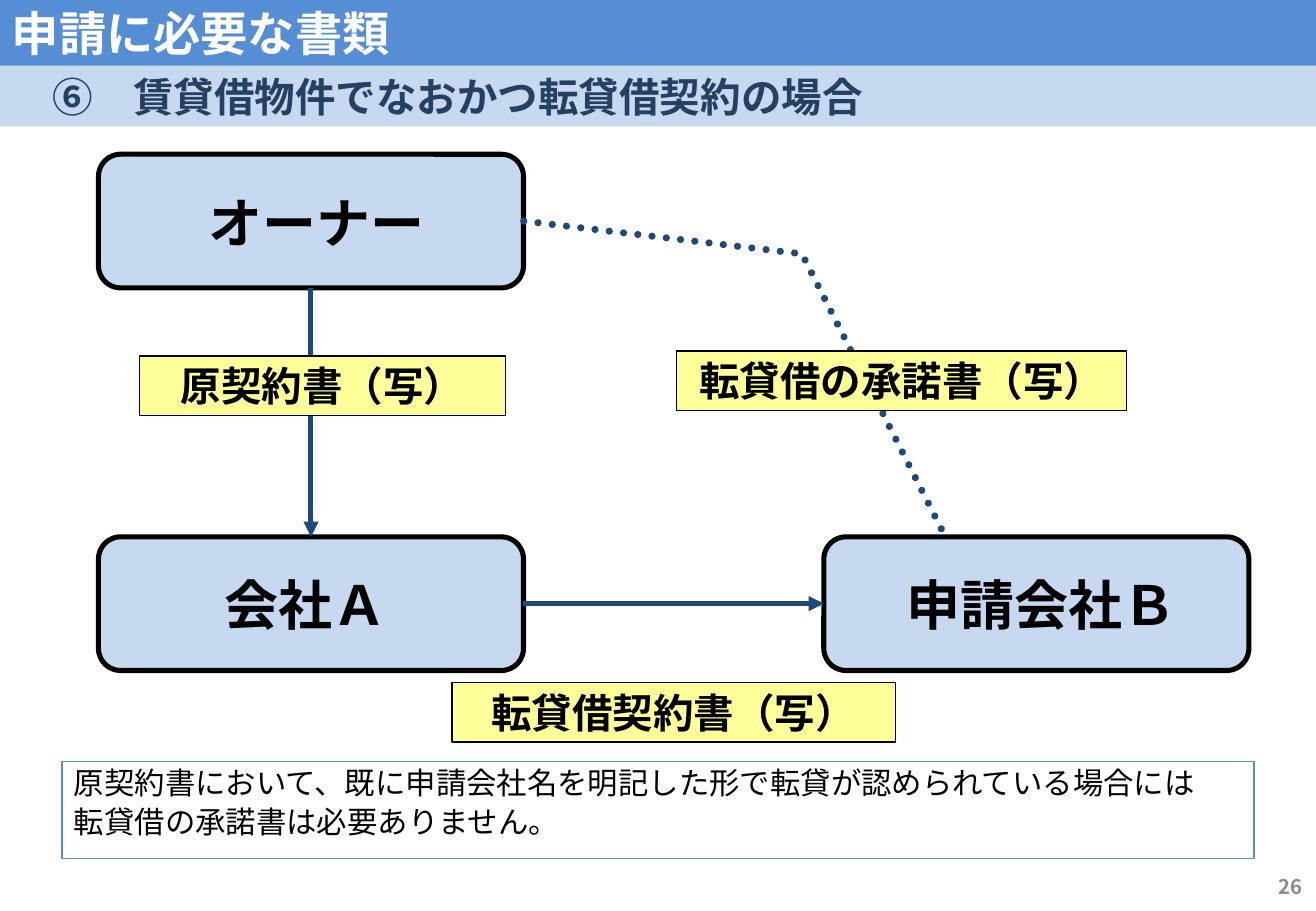
from dataclasses import dataclass

import lxml.etree
import pptx
import pptx.dml.color
import pptx.enum.dml
import pptx.enum.lang
import pptx.enum.shapes
import pptx.enum.text
import pptx.oxml.ns
import pptx.util

RGBColor = pptx.dml.color.RGBColor
Align = pptx.enum.text.PP_ALIGN
Anchor = pptx.enum.text.MSO_ANCHOR
Geometry = pptx.enum.shapes.MSO_SHAPE

WHITE = RGBColor(0xFF, 0xFF, 0xFF)
BLACK = RGBColor(0x00, 0x00, 0x00)
BLUE = RGBColor(0x55, 0x8E, 0xD5)
PALE_BLUE = RGBColor(0xC6, 0xD9, 0xF1)
NAVY = RGBColor(0x1F, 0x49, 0x7D)
DARK_NAVY = RGBColor(0x25, 0x40, 0x61)
YELLOW = RGBColor(0xFF, 0xFF, 0x99)
GRAY = RGBColor(0x8C, 0x8C, 0x8C)

BODY_FONT = "Arial"
HEADING_FONT = "Noto Sans CJK JP"
SLIDE_WIDTH = pptx.util.Inches(10.83)
SLIDE_HEIGHT = pptx.util.Inches(7.5)

# Sizes shared by repeated parts, in percent of the slide
PARTY_SIZE = (32.3, 14.67)
CAPTION_SIZE = (31.49, 8.4)
CAPTION_DROP = 3.2
LABEL_HEIGHT = 6.53


@dataclass(frozen=True)
class Area:
    """Place on the slide, in percent of its width and height."""
    left: float
    top: float
    width: float
    height: float

    def emu(self) -> tuple[int, int, int, int]:
        return (across(self.left), down(self.top),
                across(self.width), down(self.height))


@dataclass(frozen=True)
class Style:
    size: float
    color: RGBColor = BLACK
    font: str = BODY_FONT
    bold: bool = True
    align: Align = Align.CENTER
    anchor: Anchor = Anchor.TOP
    line_spacing: float = 1.0
    insets: tuple[float, float, float, float] = (0.1, 0.05, 0.1, 0.05)


@dataclass(frozen=True)
class Party:
    name: str
    left: float
    top: float
    caption_left: float


@dataclass(frozen=True)
class Document:
    name: str
    left: float
    top: float
    width: float


@dataclass(frozen=True)
class Band:
    text: str
    area: Area
    fill: RGBColor
    style: Style


CAPTION_STYLE = Style(32)
LABEL_STYLE = Style(24, line_spacing=0.8, insets=(0.1, 0.12, 0.1, 0.05))
NOTE_STYLE = Style(18, bold=False, align=Align.LEFT, line_spacing=0.8,
                   insets=(0.1, 0.08, 0.1, 0.08))
PAGE_STYLE = Style(12, GRAY, HEADING_FONT, align=Align.RIGHT, anchor=Anchor.MIDDLE)
TITLE_STYLE = Style(28, WHITE, HEADING_FONT, align=Align.LEFT, anchor=Anchor.MIDDLE)
SUBTITLE_STYLE = Style(24, DARK_NAVY, HEADING_FONT, align=Align.LEFT, anchor=Anchor.MIDDLE)

OWNER = Party("オーナー", 7.48, 16.93, 8.31)
APPLICANT = Party("申請会社Ｂ", 62.6, 58.93, 63.43)
LESSEE = Party("会社Ａ", 7.48, 58.93, 7.48)
PARTIES = (OWNER, APPLICANT, LESSEE)

DOCUMENTS = (
    Document("原契約書（写）", 10.62, 39.07, 27.79),
    Document("転貸借契約書（写）", 34.35, 74.93, 33.7),
    Document("転貸借の承諾書（写）", 51.43, 38.53, 34.16),
)
CONSENT_ROUTE = ((39.8, 24.27), (60.94, 27.87), (71.84, 58.93))
NOTE = ("原契約書において、既に申請会社名を明記した形で転貸が認められている場合には\n"
        "転貸借の承諾書は必要ありません。")
BANDS = (
    Band("申請に必要な書類", Area(0, -0.27, 100, 7.6), BLUE, TITLE_STYLE),
    Band("　⑥　賃貸借物件でなおかつ転貸借契約の場合", Area(0, 7.2, 100, 6.67),
         PALE_BLUE, SUBTITLE_STYLE),
)


def across(share: float) -> int:
    return round(SLIDE_WIDTH * share / 100)


def down(share: float) -> int:
    return round(SLIDE_HEIGHT * share / 100)


def write(shape, text: str, style: Style) -> None:
    frame = shape.text_frame
    frame.text = text
    frame.word_wrap = True
    frame.vertical_anchor = style.anchor
    (frame.margin_left, frame.margin_top,
     frame.margin_right, frame.margin_bottom) = map(pptx.util.Inches, style.insets)
    for index, paragraph in enumerate(frame.paragraphs):
        paragraph.alignment = style.align
        paragraph.line_spacing = style.line_spacing
        if index:
            paragraph.space_before = pptx.util.Pt(6)
        for run in paragraph.runs:
            run.font.size = pptx.util.Pt(style.size)
            run.font.name = style.font
            run.font.bold = style.bold
            run.font.color.rgb = style.color
            run.font.language_id = pptx.enum.lang.MSO_LANGUAGE_ID.JAPANESE


def add_box(slide, geometry: Geometry, area: Area, fill: RGBColor | None = None,
            line: RGBColor | None = None, line_width: float = 0.75):
    box = slide.shapes.add_shape(geometry, *area.emu())
    box.shadow.inherit = False
    if fill is None:
        box.fill.background()
    else:
        box.fill.solid()
        box.fill.fore_color.rgb = fill
    if line is None:
        box.line.fill.background()
    else:
        box.line.color.rgb = line
        box.line.width = pptx.util.Pt(line_width)
    return box


def add_text(slide, area: Area, text: str, style: Style) -> None:
    write(slide.shapes.add_textbox(*area.emu()), text, style)


def add_arrow(slide, source, source_side: int, target, target_side: int) -> None:
    arrow = slide.shapes.add_connector(pptx.enum.shapes.MSO_CONNECTOR.STRAIGHT, 0, 0, 0, 0)
    arrow.begin_connect(source, source_side)
    arrow.end_connect(target, target_side)
    arrow.line.color.rgb = NAVY
    arrow.line.width = pptx.util.Pt(3)
    properties = arrow.element.spPr
    outline = properties.find(pptx.oxml.ns.qn("a:ln"))
    lxml.etree.SubElement(outline, pptx.oxml.ns.qn("a:tailEnd"), type="triangle")
    lxml.etree.SubElement(properties, pptx.oxml.ns.qn("a:effectLst"))


def add_dotted_route(slide, shares: tuple[tuple[float, float], ...]) -> None:
    start, *rest = [(across(x), down(y)) for x, y in shares]
    builder = slide.shapes.build_freeform(*start)
    builder.add_line_segments(rest, close=False)
    route = builder.convert_to_shape()
    route.shadow.inherit = False
    route.fill.background()
    route.line.color.rgb = NAVY
    route.line.width = pptx.util.Pt(4.25)
    route.line.dash_style = pptx.enum.dml.MSO_LINE.ROUND_DOT
    route.element.spPr.find(pptx.oxml.ns.qn("a:ln")).set("cap", "rnd")


def main() -> None:
    deck = pptx.Presentation()
    deck.slide_width, deck.slide_height = SLIDE_WIDTH, SLIDE_HEIGHT
    slide = deck.slides.add_slide(deck.slide_layouts[6])

    # Parties and their names
    boxes = {party: add_box(slide, Geometry.ROUNDED_RECTANGLE,
                            Area(party.left, party.top, *PARTY_SIZE), PALE_BLUE, BLACK, 3)
             for party in PARTIES}
    for party in PARTIES:
        add_text(slide, Area(party.caption_left, party.top + CAPTION_DROP, *CAPTION_SIZE),
                 party.name, CAPTION_STYLE)

    # Relations between the parties
    add_dotted_route(slide, CONSENT_ROUTE)
    add_arrow(slide, boxes[LESSEE], 3, boxes[APPLICANT], 1)
    add_arrow(slide, boxes[OWNER], 2, boxes[LESSEE], 0)

    # Required documents
    for document in DOCUMENTS:
        area = Area(document.left, document.top, document.width, LABEL_HEIGHT)
        write(add_box(slide, Geometry.RECTANGLE, area, YELLOW, BLACK),
              document.name, LABEL_STYLE)

    # Note and page number
    note = add_box(slide, Geometry.RECTANGLE, Area(4.71, 83.6, 90.58, 10.67), line=BLUE)
    write(note, NOTE, NOTE_STYLE)
    add_text(slide, Area(76.55, 94.67, 23.36, 5.33), "26", PAGE_STYLE)

    # Heading bands
    for band in BANDS:
        write(add_box(slide, Geometry.RECTANGLE, band.area, band.fill), band.text, band.style)

    deck.save("out.pptx")


if __name__ == "__main__":
    main()
